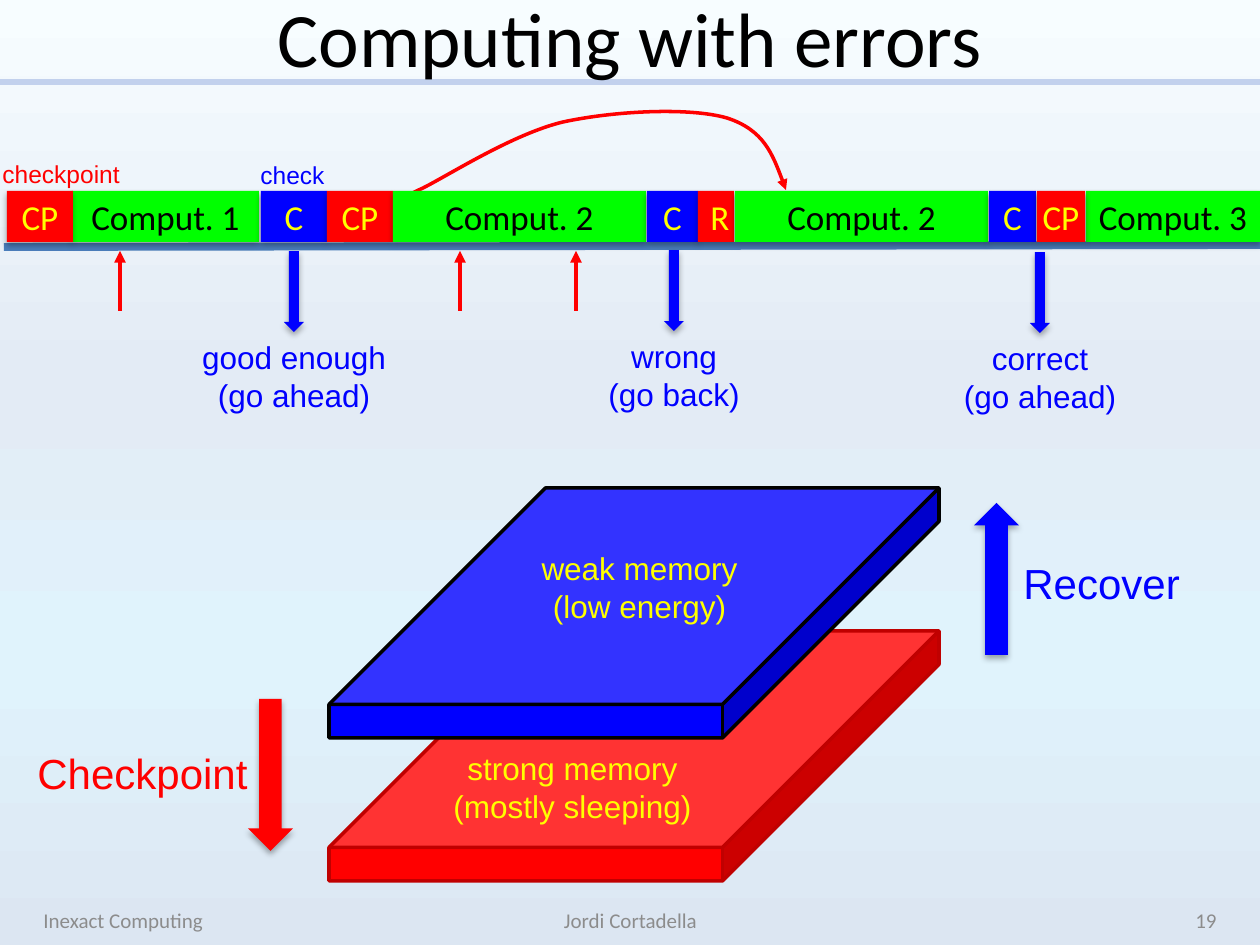
from dataclasses import dataclass
from lxml.etree import SubElement
from pptx import Presentation
from pptx.dml.color import RGBColor
from pptx.enum.shapes import MSO_CONNECTOR, MSO_SHAPE
from pptx.enum.text import MSO_ANCHOR, MSO_AUTO_SIZE, PP_ALIGN
from pptx.oxml.ns import qn
from pptx.util import Emu, Pt

SCALE = 914400 / 126


@dataclass(frozen=True)
class Theme:
    red: str = "FF0000"
    blue: str = "0000FF"
    green: str = "00FF00"
    yellow: str = "FFFF00"
    black: str = "000000"
    brick: str = "C00000"
    grey: str = "8C8C8C"
    rule: str = "C2D1ED"
    track: str = "4B7EBC"
    sky: tuple = ((0, "F7FDFF"), (40, "E3EBF5"), (70, "E0F3FC"), (100, "DCE6F2"))
    head: str = "Calibri"
    body: str = "Arial"
    title: int = 44
    large: int = 24
    block: int = 20
    label: int = 18
    small: int = 14
    foot: int = 12


T = Theme()
LEFT, MID, RIGHT = PP_ALIGN.LEFT, PP_ALIGN.CENTER, PP_ALIGN.RIGHT


def px(*vals):
    return [Emu(round(v * SCALE)) for v in vals]


def paint(slide):
    """Fill the background with the vertical sky gradient."""
    fill = slide.background.fill
    fill.gradient()
    fill.gradient_angle = 270
    stops = next(slide.element.iter(qn("a:gsLst")))
    for stop in list(stops):
        stops.remove(stop)
    for pos, color in T.sky:
        stop = SubElement(stops, qn("a:gs"), pos=str(pos * 1000))
        SubElement(stop, qn("a:srgbClr"), val=color)


def write(frame, text, size, color, font, align):
    para = frame.paragraphs[0]
    para.alignment = align
    for i, line in enumerate(text.split("\n")):
        if i:
            para.add_line_break()
        run = para.add_run()
        run.text = line
        run.font.size = Pt(size)
        run.font.name = font
        run.font.color.rgb = RGBColor.from_string(color)


def add_text(slide, box, text, size, color, font=T.body, align=MID):
    """Add a free label that grows with its text."""
    frame = slide.shapes.add_textbox(*px(*box)).text_frame
    frame.word_wrap = False
    frame.auto_size = MSO_AUTO_SIZE.SHAPE_TO_FIT_TEXT
    write(frame, text, size, color, font, align)


def add_bar(slide, box, text, size, color, align):
    """Add a title or footer text, centred in the height of its box."""
    frame = slide.shapes.add_textbox(*px(*box)).text_frame
    frame.word_wrap = True
    frame.vertical_anchor = MSO_ANCHOR.MIDDLE
    write(frame, text, size, color, T.head, align)


def add_shape(slide, kind, box, fill, edge=None):
    shape = slide.shapes.add_shape(kind, *px(*box))
    shape.shadow.inherit = False
    shape.fill.solid()
    shape.fill.fore_color.rgb = RGBColor.from_string(fill)
    if edge:
        shape.line.color.rgb = RGBColor.from_string(edge)
        shape.line.width = Pt(2)
    else:
        shape.line.fill.background()
    return shape


def add_shade(shape):
    """Drop a soft shadow straight below the shape."""
    effects = shape.element.spPr.find(qn("a:effectLst"))
    drop = SubElement(effects, qn("a:outerShdw"), blurRad=str(Pt(3.5)),
                      dist=str(Pt(2.2)), dir="5400000", rotWithShape="0")
    color = SubElement(drop, qn("a:srgbClr"), val=T.black)
    SubElement(color, qn("a:alpha"), val="32000")


def add_arrow(slide, kind, box, fill):
    add_shade(add_shape(slide, kind, box, fill))


def add_block(slide, left, width, text, fill, color, tight=False):
    """Add one step on the timeline."""
    shape = add_shape(slide, MSO_SHAPE.RECTANGLE, (left, 191, width, 51), fill)
    add_shade(shape)
    frame = shape.text_frame
    frame.vertical_anchor = MSO_ANCHOR.MIDDLE
    if tight:
        frame.margin_left = frame.margin_right = 0
    write(frame, text, T.block, color, T.head, MID)


def add_cube(slide, top, fill, edge):
    cube = add_shape(slide, MSO_SHAPE.CUBE, (329, top, 610, 250), fill, edge)
    cube.adjustments[0] = 0.866


def set_line(shape, color, width, tip=False):
    shape.line.color.rgb = RGBColor.from_string(color)
    shape.line.width = Pt(width)
    if tip:
        SubElement(shape.line._get_or_add_ln(), qn("a:tailEnd"), type="triangle")


def add_line(slide, ends, color, width, tip=False):
    line = slide.shapes.add_connector(MSO_CONNECTOR.STRAIGHT, *px(*ends))
    set_line(line, color, width, tip)
    SubElement(line.element.spPr, qn("a:effectLst"))


def add_curve(slide, start, points, color, width):
    """Draw a Bezier path: every three points are two handles and an end."""
    pen = slide.shapes.build_freeform(*start, scale=SCALE)
    pen.add_line_segments(points, close=False)
    curve = pen.convert_to_shape()
    curve.shadow.inherit = False
    curve.fill.background()
    set_line(curve, color, width, True)
    route = next(curve.element.iter(qn("a:path")))
    legs = route.findall(qn("a:lnTo"))
    for i in range(0, len(legs), 3):
        bend = SubElement(route, qn("a:cubicBezTo"))
        for leg in legs[i:i + 3]:
            bend.append(leg[0])
            route.remove(leg)


def add_track(slide):
    """Draw the timeline with its steps, faults and check results."""
    add_curve(slide, (417, 193),
              [(408, 197), (399, 199), (423, 188),
               (449, 175), (513, 134), (563, 122),
               (614, 111), (689, 107), (727, 118),
               (764, 130), (775, 160), (786, 190)], T.red, 2)
    add_line(slide, (4, 247, 1270, 245), T.track, 4.5)
    for x in (120, 460, 576):
        add_line(slide, (x, 311, x, 251), T.red, 2.25, True)
    for left, width, text, fill in (
            (72, 187, "Comput. 1", T.green), (7, 66, "CP", T.red),
            (261, 66, "C", T.blue), (327, 66, "CP", T.red),
            (393, 253, "Comput. 2", T.green), (647, 51, "C", T.blue),
            (698, 36, "R", T.red), (735, 253, "Comput. 2", T.green),
            (989, 47, "C", T.blue), (1086, 174, "Comput. 3", T.green),
            (1037, 48, "CP", T.red)):
        color = T.black if fill == T.green else T.yellow
        add_block(slide, left, width, text, fill, color, left == 1037)
    for mid, top, width, text in ((294, 251, 210, "good enough\n(go ahead)"),
                                  (674, 250, 158, "wrong\n(go back)"),
                                  (1040, 252, 179, "correct\n(go ahead)")):
        add_arrow(slide, MSO_SHAPE.DOWN_ARROW, (mid - 10, top, 20, 81), T.blue)
        add_text(slide, (mid - width / 2, top + 81, width, 89), text, T.label, T.blue)
    add_text(slide, (-10, 153, 144, 43), "checkpoint", T.small, T.red, align=LEFT)
    add_text(slide, (248, 154, 90, 43), "check", T.small, T.blue, align=LEFT)


def add_stack(slide):
    """Draw the two memory layers and the moves between them."""
    add_cube(slide, 631, T.red, T.brick)
    add_cube(slide, 488, T.blue, T.black)
    add_text(slide, (528, 543, 223, 89), "weak memory\n(low energy)", T.label, T.yellow)
    add_text(slide, (440, 743, 265, 89), "strong memory\n(mostly sleeping)",
             T.label, T.yellow)
    add_arrow(slide, MSO_SHAPE.DOWN_ARROW, (248, 699, 45, 152), T.red)
    add_text(slide, (25, 741, 238, 63), "Checkpoint", T.large, T.red, align=LEFT)
    add_arrow(slide, MSO_SHAPE.UP_ARROW, (974, 503, 45, 152), T.blue)
    add_text(slide, (1011, 551, 184, 63), "Recover", T.large, T.blue, align=LEFT)


def main():
    deck = Presentation()
    deck.slide_width, deck.slide_height = px(1260, 945)
    slide = deck.slides.add_slide(deck.slide_layouts[6])
    paint(slide)
    add_line(slide, (0, 82, 1260, 82), T.rule, 4)
    add_bar(slide, (63, 0, 1134, 73), "Computing with errors", T.title, T.black, MID)
    for left, width, text, align in ((31, 294, "Inexact Computing", LEFT),
                                     (431, 399, "Jordi Cortadella", MID),
                                     (935, 294, "19", RIGHT)):
        add_bar(slide, (left, 895, width, 50), text, T.foot, T.grey, align)
    add_track(slide)
    add_stack(slide)
    deck.save("out.pptx")


if __name__ == "__main__":
    main()
